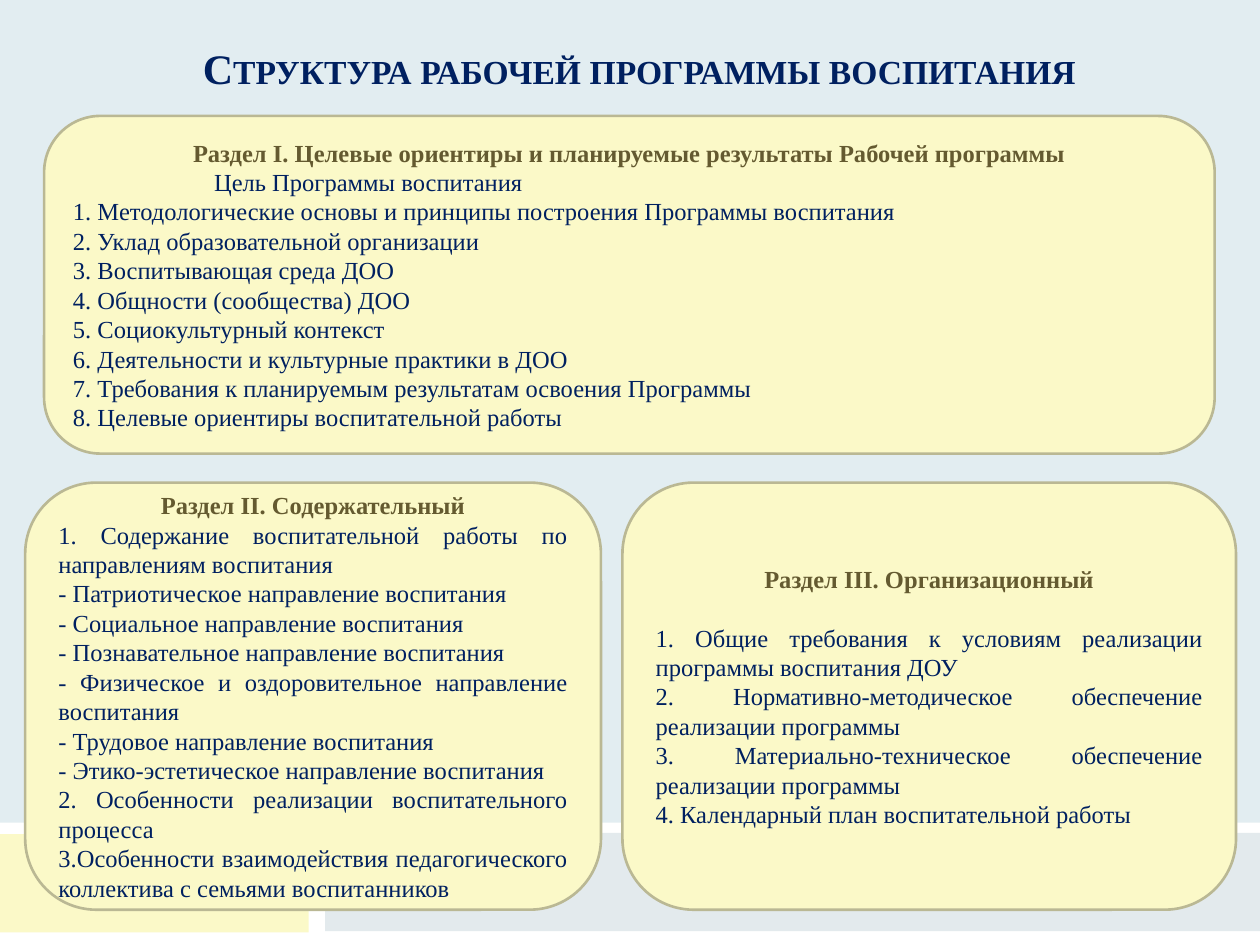
import pptx
import pptx.dml.color
import pptx.enum.shapes
import pptx.enum.text
import pptx.util
from pptx.dml.color import RGBColor
from pptx.util import Inches

ALIGN = pptx.enum.text.PP_ALIGN
SHAPE = pptx.enum.shapes.MSO_SHAPE

SKY = RGBColor(0xE2, 0xED, 0xF1)
WHITE = RGBColor(0xFF, 0xFF, 0xFF)
CREAM = RGBColor(0xFB, 0xF9, 0xC8)
MIST = RGBColor(0xE3, 0xEA, 0xED)
KHAKI = RGBColor(0xBA, 0xB8, 0x94)
OLIVE = RGBColor(0x64, 0x5A, 0x30)
NAVY = RGBColor(0x00, 0x20, 0x60)

GOALS = [
    "1. Методологические основы и принципы построения Программы воспитания",
    "2. Уклад образовательной организации",
    "3. Воспитывающая среда ДОО",
    "4. Общности (сообщества) ДОО",
    "5. Социокультурный контекст",
    "6. Деятельности и культурные практики в ДОО",
    "7. Требования к планируемым результатам освоения Программы",
    "8. Целевые ориентиры воспитательной работы",
]
CONTENT = [
    "1. Содержание воспитательной работы по направлениям воспитания",
    "- Патриотическое направление воспитания",
    "- Социальное направление воспитания",
    "- Познавательное направление воспитания",
    "- Физическое и оздоровительное направление воспитания",
    "- Трудовое направление воспитания",
    "- Этико-эстетическое направление воспитания",
    "2. Особенности реализации воспитательного процесса",
    "3.Особенности взаимодействия педагогического коллектива с семьями воспитанников",
]
ORGANIZATION = [
    "1. Общие требования к условиям реализации программы воспитания ДОУ",
    "2. Нормативно-методическое обеспечение реализации программы",
    "3. Материально-техническое обеспечение реализации программы",
    "4. Календарный план воспитательной работы",
]


def write(frame, text, size=14, color=NAVY, bold=False, align=ALIGN.JUSTIFY,
          gap_after=0, indent=0, small_caps=False):
    """Write one paragraph, using the empty first one if it is still free."""
    paragraph = frame.paragraphs[0]
    if paragraph.runs:
        paragraph = frame.add_paragraph()
    paragraph.alignment = align
    paragraph.space_after = pptx.util.Pt(gap_after)
    if indent:
        paragraph._p.get_or_add_pPr().set("marL", str(Inches(indent)))
    run = paragraph.add_run()
    run.text = text
    run.font.name = "Times New Roman"
    run.font.size = pptx.util.Pt(size)
    run.font.bold = bold
    run.font.color.rgb = color
    if small_caps:
        run.font._element.set("cap", "small")


def add_block(slide, box, fill, kind=SHAPE.RECTANGLE, line=None):
    block = slide.shapes.add_shape(kind, *map(Inches, box))
    block.shadow.inherit = False
    block.fill.solid()
    block.fill.fore_color.rgb = fill
    if line is None:
        block.line.fill.background()
    else:
        block.line.color.rgb = line
        block.line.width = pptx.util.Pt(1.5)
    return block


def add_footer_band(slide, box):
    left, top, width, height = box
    add_block(slide, box, WHITE)
    add_block(slide, (left - 0.01, top + 0.09, 2.46, 0.78), CREAM)
    add_block(slide, (left + 2.58, top + 0.08, width - 2.58, 0.78), MIST)


def add_title(slide, box):
    title = slide.shapes.add_textbox(*map(Inches, box)).text_frame
    title.word_wrap = True
    write(title, "Структура рабочей программы воспитания", size=24, bold=True,
          align=ALIGN.CENTER, small_caps=True)


def add_section(slide, box, heading, items, subheading=None, heading_gap=0):
    """Rounded card with a centred heading and a justified list."""
    card = add_block(slide, box, CREAM, SHAPE.ROUNDED_RECTANGLE, KHAKI)
    frame = card.text_frame
    frame.word_wrap = True
    frame.vertical_anchor = pptx.enum.text.MSO_ANCHOR.MIDDLE
    write(frame, heading, color=OLIVE, bold=True, align=ALIGN.CENTER,
          gap_after=heading_gap)
    if subheading:
        write(frame, subheading, align=ALIGN.LEFT, indent=1.12)
    for item in items:
        write(frame, item)


def main():
    deck = pptx.Presentation()
    deck.slide_width, deck.slide_height = Inches(10), Inches(7.5)
    slide = deck.slides.add_slide(deck.slide_layouts[6])
    slide.background.fill.solid()
    slide.background.fill.fore_color.rgb = SKY

    add_footer_band(slide, (0, 6.53, 10, 0.97))
    add_title(slide, (0.51, 0.29, 9.13, 0.5))

    # Three sections of the programme
    add_section(slide, (0.35, 0.92, 9.29, 2.68),
                "Раздел I. Целевые ориентиры и планируемые результаты Рабочей программы",
                GOALS, subheading="Цель Программы воспитания")
    add_section(slide, (0.2, 3.83, 4.57, 3.39),
                "Раздел II. Содержательный", CONTENT)
    add_section(slide, (4.94, 3.83, 4.87, 3.39),
                "Раздел III. Организационный", ORGANIZATION, heading_gap=16.8)

    deck.save("out.pptx")


if __name__ == "__main__":
    main()
